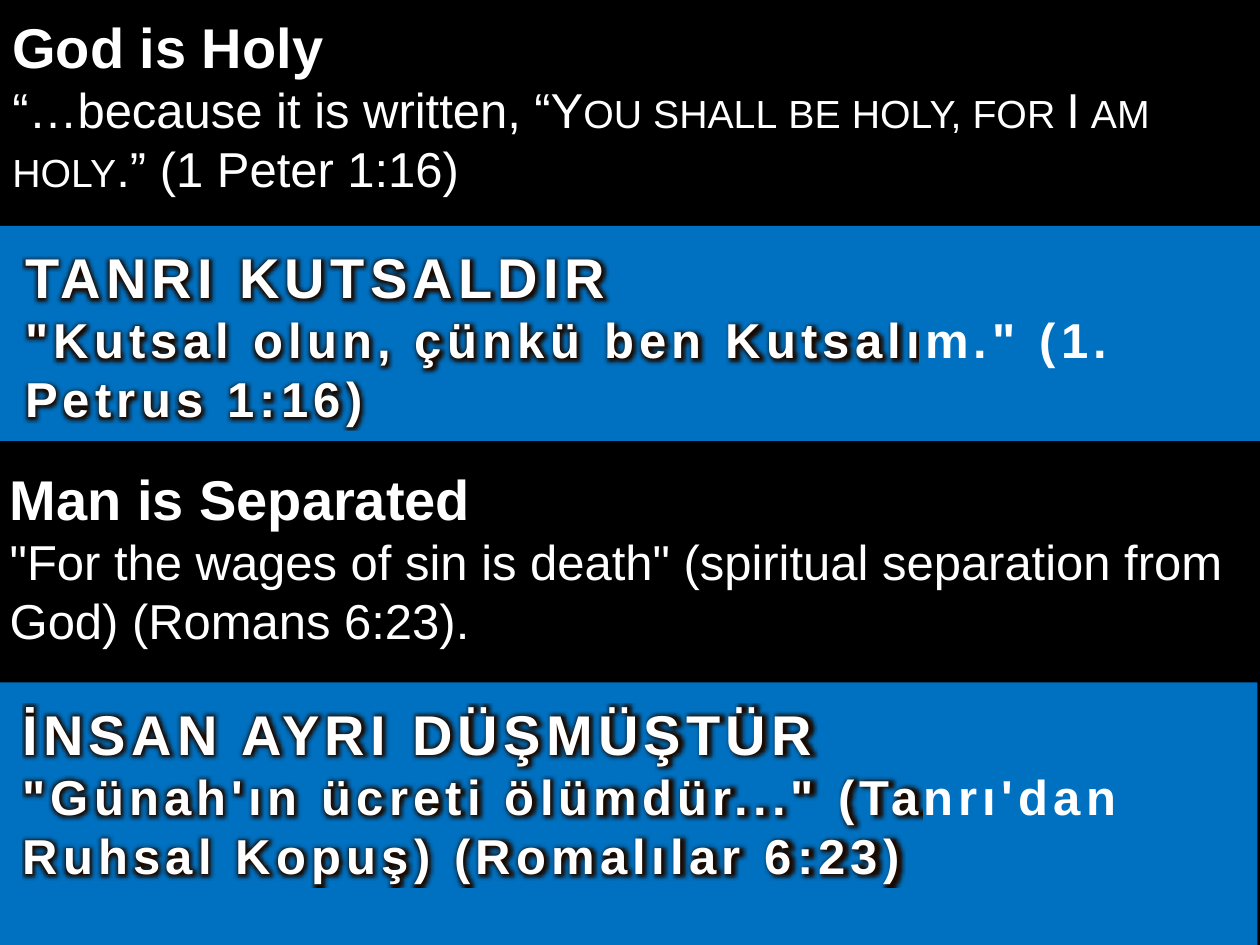
from lxml.etree import SubElement
from pptx import Presentation
from pptx.dml.color import RGBColor
from pptx.enum.shapes import MSO_SHAPE
from pptx.enum.text import MSO_ANCHOR, PP_ALIGN
from pptx.oxml.ns import qn
from pptx.util import Pt

COLORS = {"background": "000000", "band": "0070C0", "text": "FFFFFF", "glow": "1A0A00"}
WIDTH, HEIGHT = 720, 540
SHIFT = -1.5


class SlideBuilder:
    font_name = "Arial"
    heading_size = 32
    verse_size = 28
    letter_spacing = 3
    glow_radius = 5

    def __init__(self, slide):
        self.slide = slide
        fill = slide.background.fill
        fill.solid()
        fill.fore_color.rgb = self.color("background")

    def color(self, name):
        return RGBColor.from_string(COLORS[name])

    def frame(self, shape, left, top):
        text_frame = shape.text_frame
        text_frame.word_wrap = True
        text_frame.vertical_anchor = MSO_ANCHOR.TOP
        text_frame.margin_left, text_frame.margin_top = Pt(left), Pt(top)
        text_frame.margin_right = text_frame.margin_bottom = Pt(7.2)
        return text_frame

    def run(self, paragraph, text, size, bold=False):
        run = paragraph.add_run()
        run.text = text
        run.font.name = self.font_name
        run.font.size = Pt(size)
        run.font.bold = bold
        run.font.color.rgb = self.color("text")
        return run

    def add_glow(self, run):
        """Space the letters of a run and surround them with a dark glow."""
        properties = run.font._element
        properties.set("spc", str(self.letter_spacing * 100))
        effects = SubElement(properties, qn("a:effectLst"))
        glow = SubElement(effects, qn("a:glow"), rad=str(Pt(self.glow_radius)))
        SubElement(glow, qn("a:srgbClr"), val=COLORS["glow"])
        properties.find(qn("a:latin")).addprevious(effects)

    def english(self, left, top, height, heading, verse, new_paragraph=False):
        """Add plain text; verse is a list of (text, small caps) pairs."""
        box = self.slide.shapes.add_textbox(Pt(left), Pt(top), Pt(WIDTH), Pt(height))
        text_frame = self.frame(box, 7.2, 7.2)
        paragraph = text_frame.paragraphs[0]
        self.run(paragraph, heading, self.heading_size, bold=True)
        if new_paragraph:
            paragraph = text_frame.add_paragraph()
        else:
            paragraph.add_line_break()
        for text, small_caps in verse:
            run = self.run(paragraph, text, self.verse_size)
            if small_caps:
                run.font._element.set("cap", "small")

    def turkish(self, left, top, height, heading, verse):
        """Add a blue band with glowing text."""
        band = self.slide.shapes.add_shape(
            MSO_SHAPE.RECTANGLE, Pt(left), Pt(top), Pt(WIDTH), Pt(height))
        band.shadow.inherit = False
        band.fill.solid()
        band.fill.fore_color.rgb = self.color("band")
        band.line.fill.background()
        paragraph = self.frame(band, 14.4, 9.5).paragraphs[0]
        paragraph.alignment = PP_ALIGN.LEFT
        self.add_glow(self.run(paragraph, heading, self.heading_size, bold=True))
        paragraph.add_line_break()
        self.add_glow(self.run(paragraph, verse, self.verse_size, bold=True))


def main():
    presentation = Presentation()
    presentation.slide_width, presentation.slide_height = Pt(WIDTH), Pt(HEIGHT)
    builder = SlideBuilder(presentation.slides.add_slide(presentation.slide_layouts[6]))

    builder.english(0, 0, 114, "God is Holy", [
        ("“…because it is written, “", False),
        ("You shall be holy, for I am holy", True),
        (".” (1 Peter 1:16)", False),
    ], new_paragraph=True)
    builder.turkish(0, 129, 123, "TANRI KUTSALDIR",
                    '"Kutsal olun, çünkü ben Kutsalım." (1. Petrus 1:16)')
    builder.english(SHIFT, 258, 102, "Man is Separated", [
        ('"For the wages of sin is death" (spiritual separation from God) '
         "(Romans 6:23).", False),
    ])
    builder.turkish(SHIFT, 390, 150, "İNSAN AYRI DÜŞMÜŞTÜR",
                    "\"Günah'ın ücreti ölümdür...\" (Tanrı'dan Ruhsal Kopuş) "
                    "(Romalılar 6:23)")

    presentation.save("out.pptx")


if __name__ == "__main__":
    main()
